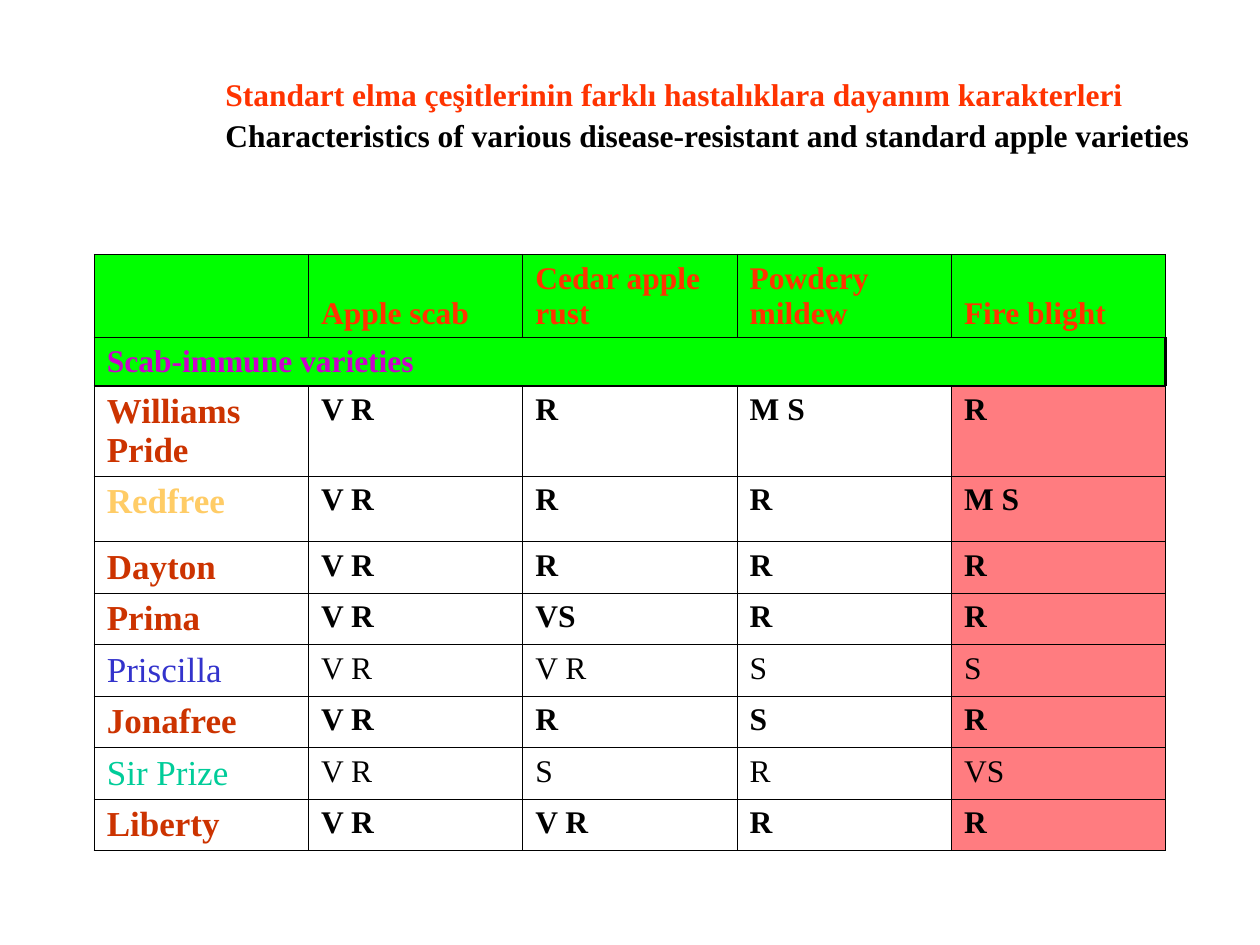
import pptx
import pptx.dml.color
import pptx.enum.text
import pptx.oxml
import pptx.oxml.ns
import pptx.util
from dataclasses import dataclass

Cm = pptx.util.Cm
Anchor = pptx.enum.text.MSO_ANCHOR


@dataclass
class Theme:
    font: str = "Times New Roman"
    text: int = 18
    name: int = 20
    black: str = "000000"
    red: str = "FF3300"
    purple: str = "CC00CC"
    rust: str = "CC3300"
    gold: str = "FFCC66"
    blue: str = "3333CC"
    teal: str = "00CC99"
    green: str = "00FF00"
    pink: str = "FF7C80"
    thin: float = 0.75
    thick: float = 2.25


def write(para, text, font, size, color, bold=True):
    """Add one formatted run to a paragraph."""
    run = para.add_run()
    run.text = text
    run.font.name = font
    run.font.size = pptx.util.Pt(size)
    run.font.bold = bold
    run.font.color.rgb = pptx.dml.color.RGBColor.from_string(color)


class Page:
    def __init__(self, deck, theme):
        self.theme = theme
        self.slide = deck.slides.add_slide(deck.slide_layouts[5])

    def title(self, lines, left, top, width, height):
        box = self.slide.shapes.title
        box.left, box.top, box.width, box.height = map(Cm, (left, top, width, height))
        frame = box.text_frame
        frame.word_wrap = True
        frame.auto_size = pptx.enum.text.MSO_AUTO_SIZE.NONE
        frame.vertical_anchor = Anchor.TOP
        for i, (text, color) in enumerate(lines):
            para = frame.add_paragraph() if i else frame.paragraphs[0]
            para.alignment = pptx.enum.text.PP_ALIGN.LEFT
            para.line_spacing = 1.08
            write(para, text, self.theme.font, self.theme.text, color)

    def table(self, left, top, width, heights, count):
        frame = self.slide.shapes.add_table(
            len(heights), count, Cm(left), Cm(top), Cm(width), Cm(sum(heights)))
        table = frame.table
        table.first_row = table.horz_banding = False
        for row, height in zip(table.rows, heights):
            row.height = Cm(height)
        return table

    def cell(self, cell, text="", size=None, color=None, bold=True,
             fill=None, anchor=Anchor.TOP, right=None):
        theme = self.theme
        cell.vertical_anchor = anchor
        if text:
            write(cell.text_frame.paragraphs[0], text, theme.font,
                  size or theme.text, color or theme.black, bold)
        if fill:
            cell.fill.solid()
            cell.fill.fore_color.rgb = pptx.dml.color.RGBColor.from_string(fill)
        else:
            cell.fill.background()
        self.edge(cell, right or theme.thin)

    def edge(self, cell, right):
        """Draw the four cell borders; they come before the fill."""
        theme = self.theme
        props = cell._tc.get_or_add_tcPr()
        widths = {"L": theme.thin, "R": right, "T": theme.thin, "B": theme.thin}
        for i, (side, width) in enumerate(widths.items()):
            props.insert(i, pptx.oxml.parse_xml(
                f'<a:ln{side} {pptx.oxml.ns.nsdecls("a")} w="{pptx.util.Pt(width)}">'
                f'<a:solidFill><a:srgbClr val="{theme.black}"/></a:solidFill>'
                f'</a:ln{side}>'))


def main():
    theme = Theme()
    deck = pptx.Presentation()
    deck.slide_width, deck.slide_height = Cm(25.4), Cm(19.05)
    page = Page(deck, theme)

    # Title in two languages
    page.title([
        ("Standart elma çeşitlerinin farklı hastalıklara dayanım karakterleri", theme.red),
        ("Characteristics of various disease-resistant and standard apple varieties",
         theme.black),
    ], 4.29, 1.32, 21.11, 1.78)

    # Table data: name, name colour, bold, ratings
    heads = ["", "Apple scab", "Cedar apple rust", "Powdery mildew", "Fire blight"]
    kinds = [
        ("Williams Pride", theme.rust, True, ["V R", "R", "M S", "R"]),
        ("Redfree", theme.gold, True, ["V R", "R", "R", "M S"]),
        ("Dayton", theme.rust, True, ["V R", "R", "R", "R"]),
        ("Prima", theme.rust, True, ["V R", "VS", "R", "R"]),
        ("Priscilla", theme.blue, False, ["V R", "V R", "S", "S"]),
        ("Jonafree", theme.rust, True, ["V R", "R", "S", "R"]),
        ("Sir Prize", theme.teal, False, ["V R", "S", "R", "VS"]),
        ("Liberty", theme.rust, True, ["V R", "V R", "R", "R"]),
    ]
    last = len(heads) - 1
    heights = [1.68, 0.97, 1.68, 1.32] + [1.02] * 6
    table = page.table(1.9, 5.13, 21.6, heights, len(heads))

    # Header row
    for col, text in enumerate(heads):
        page.cell(table.cell(0, col), text, color=theme.red,
                  fill=theme.green, anchor=Anchor.BOTTOM)

    # Group row across all columns
    table.cell(1, 0).merge(table.cell(1, last))
    for col in range(len(heads)):
        page.cell(table.cell(1, col), "" if col else "Scab-immune varieties",
                  color=theme.purple, fill=theme.green,
                  anchor=Anchor.MIDDLE, right=theme.thick)

    # One row for each variety
    for row, (name, color, bold, marks) in enumerate(kinds, 2):
        page.cell(table.cell(row, 0), name, theme.name, color, bold)
        for col, mark in enumerate(marks, 1):
            page.cell(table.cell(row, col), mark, bold=bold,
                      fill=theme.pink if col == last else None)

    deck.save("out.pptx")


if __name__ == "__main__":
    main()
